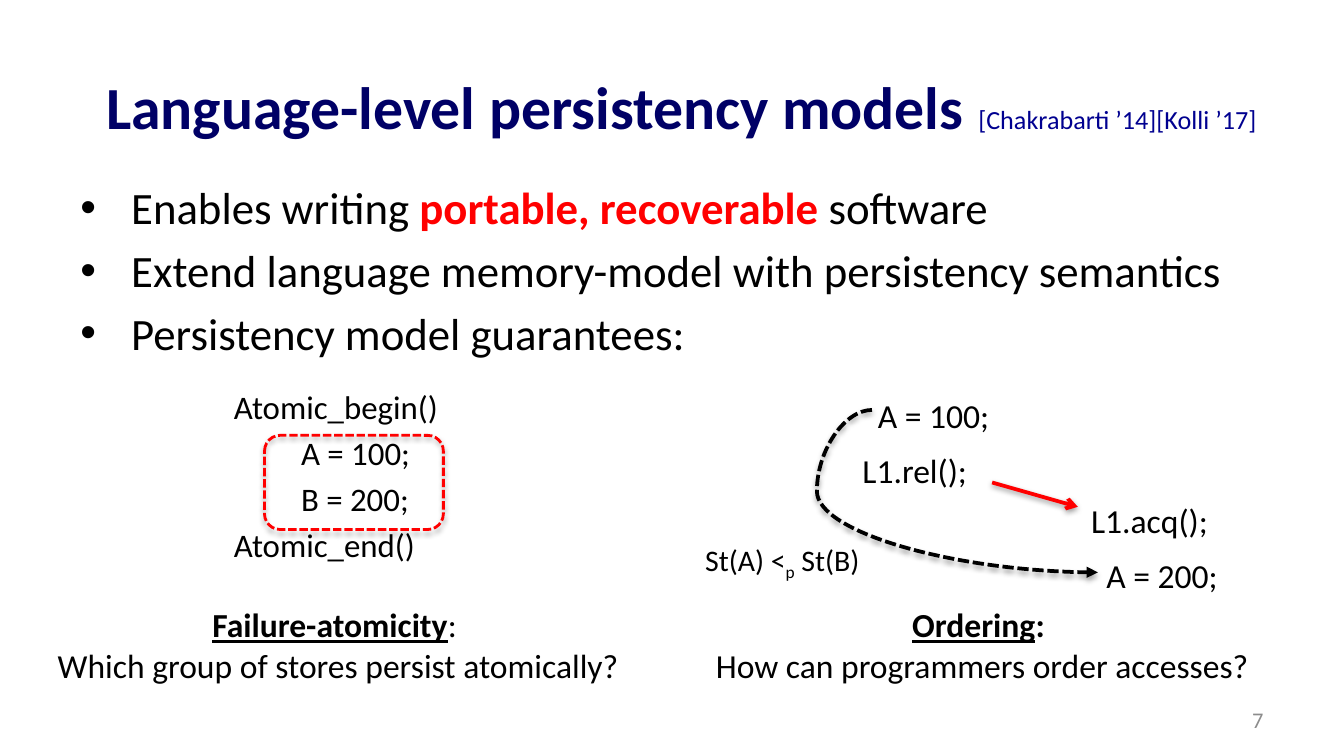
from lxml.etree import SubElement
from pptx import Presentation
from pptx.dml.color import RGBColor
from pptx.enum.dml import MSO_LINE
from pptx.enum.shapes import MSO_CONNECTOR, MSO_SHAPE
from pptx.enum.text import MSO_ANCHOR, PP_ALIGN
from pptx.oxml.ns import qn
from pptx.util import Cm, Pt

COLORS = {"title": "000066", "citation": "000090", "text": "000000",
          "accent": "FF0000", "number": "8C8C8C"}
FONT = "Calibri"


def rgb(name):
    """Return the named palette colour."""
    return RGBColor.from_string(COLORS[name])


def add_text(slide, box, paragraphs, size, align=PP_ALIGN.LEFT, color="text",
             anchor=MSO_ANCHOR.TOP, before=0.0, spacing=None):
    """Add a text box of paragraphs, each a list of (text, overrides) runs."""
    frame = slide.shapes.add_textbox(*map(Cm, box)).text_frame
    frame.word_wrap = True
    frame.vertical_anchor = anchor
    for index, runs in enumerate(paragraphs):
        paragraph = frame.add_paragraph() if index else frame.paragraphs[0]
        paragraph.alignment = align
        if index and before:
            paragraph.space_before = Pt(before)
        if spacing:
            paragraph.line_spacing = spacing
        for text, style in runs:
            run = paragraph.add_run()
            run.text = text
            run.font.name = FONT
            run.font.size = Pt(style.get("size", size))
            run.font.bold = style.get("bold", False)
            run.font.underline = style.get("underline", False)
            run.font.color.rgb = rgb(style.get("color", color))
            if "baseline" in style:
                run.font._element.set("baseline", str(style["baseline"]))
    return frame


def indent(paragraph, margin, first=0.0):
    """Set the left margin and first-line indent of a paragraph."""
    properties = paragraph._p.get_or_add_pPr()
    properties.set("marL", str(Cm(margin)))
    properties.set("indent", str(Cm(first)))
    return properties


def add_shadow(shape, alpha, distance):
    """Give a shape a soft shadow falling straight down."""
    effects = SubElement(shape._element.spPr, qn("a:effectLst"))
    shadow = SubElement(effects, qn("a:outerShdw"), blurRad=str(Pt(3.1)),
                        dist=str(Pt(distance)), dir="5400000", rotWithShape="0")
    black = SubElement(shadow, qn("a:srgbClr"), val=COLORS["text"])
    SubElement(black, qn("a:alpha"), val=str(alpha * 1000))


def add_arrow(slide, kind, start, end, color, head, dash=None):
    """Add a shadowed connector with an arrowhead at its end."""
    arrow = slide.shapes.add_connector(kind, *map(Cm, (*start, *end)))
    arrow.line.color.rgb = rgb(color)
    arrow.line.width = Pt(2)
    if dash:
        arrow.line.dash_style = dash
    SubElement(arrow.line._get_or_add_ln(), qn("a:tailEnd"), type=head)
    add_shadow(arrow, 38, 1.6)
    return arrow


def add_title(slide, box):
    """Place the heading and its citations."""
    add_text(slide, box, [[
        ("Language-level persistency models ", {"bold": True}),
        ("[Chakrabarti ’14][Kolli ’17]", {"size": 14, "color": "citation"}),
    ]], 32, PP_ALIGN.CENTER, "title", MSO_ANCHOR.MIDDLE)


def add_bullets(slide, box):
    """Place the three bulleted statements."""
    frame = add_text(slide, box, [
        [("Enables writing ", {}),
         ("portable, recoverable ", {"bold": True, "color": "accent"}),
         ("software", {})],
        [("Extend language memory-model with persistency semantics", {})],
        [("Persistency model guarantees:", {})],
    ], 24, before=4.8)
    for paragraph in frame.paragraphs:
        properties = indent(paragraph, 0.96, -0.96)
        SubElement(properties, qn("a:buFont"), typeface="Arial")
        SubElement(properties, qn("a:buChar"), char="•")


def add_caption(slide, box, term, colon_bold, question):
    """Place an underlined term above the question it answers."""
    return add_text(slide, box, [
        [(term, {"bold": True, "underline": True}), (": ", {"bold": colon_bold})],
        [(question, {})],
    ], 18, PP_ALIGN.CENTER)


def add_atomicity(slide, box):
    """Place the failure-atomicity example and caption."""
    left, top, width, height = box
    lines = ["Atomic_begin()", "A = 100;", "B = 200;", "Atomic_end()"]
    code = add_text(slide, (left + 3.64, top, 4.47, 4.27),
                    [[(line, {})] for line in lines], 17.6, before=3.5)
    for store in code.paragraphs[1:3]:
        indent(store, 1.27)
    group = slide.shapes.add_shape(
        MSO_SHAPE.ROUNDED_RECTANGLE,
        *map(Cm, (left + 4.47, top + 1.04, 3.38, 1.78)))
    group.fill.background()
    group.line.color.rgb = rgb("accent")
    group.line.width = Pt(1.5)
    group.line.dash_style = MSO_LINE.SQUARE_DOT
    add_shadow(group, 35, 1.8)
    add_caption(slide, (left, top + height - 1.8, width, 1.8),
                "Failure-atomicity", False,
                "Which group of stores persist atomically?")


def add_ordering(slide, box):
    """Place the two-thread ordering example and caption."""
    left, top, width, height = box
    caption = add_caption(slide, (left, top + height - 1.8, width, 1.8),
                          "Ordering", True, "How can programmers order accesses?")
    for paragraph in caption.paragraphs:
        indent(paragraph, 1.75, -0.89)
    threads = [((3.78, 0, 3.45, 2.44), ["A = 100;", "L1.rel();"], 0),
               ((8.1, 1.98, 3.18, 2.59), ["L1.acq();", "A = 200;"], 1)]
    for (x, y, w, h), lines, store in threads:
        code = add_text(slide, (left + x, top + y, w, h),
                        [[(line, {})] for line in lines], 18,
                        before=3.6, spacing=1.2)
        indent(code.paragraphs[store], 0.29)
    add_arrow(slide, MSO_CONNECTOR.STRAIGHT, (left + 6.48, top + 1.93),
              (left + 8.1, top + 2.39), "accent", "arrow")
    add_text(slide, (left + 0.51, top + 2.77, 4.01, 1.19), [[
        ("St(A) <", {}), ("p", {"baseline": -25000}), (" St(B)", {}),
    ]], 16, PP_ALIGN.CENTER, spacing=1.2)
    persist = add_arrow(slide, MSO_CONNECTOR.CURVE, (left + 4.21, top + 0.56),
                        (left + 8.48, top + 3.63), "text", "triangle",
                        MSO_LINE.SQUARE_DOT)
    adjustments = persist._element.spPr.find(qn("a:prstGeom")).find(qn("a:avLst"))
    SubElement(adjustments, qn("a:gd"), name="adj1", fmla="val -24400")


def add_number(slide, box):
    """Place the slide number."""
    add_text(slide, box, [[("7", {})]], 12, PP_ALIGN.RIGHT, "number",
             MSO_ANCHOR.MIDDLE)


def main():
    """Build and save the slide."""
    deck = Presentation()
    deck.slide_width, deck.slide_height = Cm(25.4), Cm(14.29)
    slide = deck.slides.add_slide(deck.slide_layouts[6])
    add_title(slide, (1.27, 0.51, 23.22, 2.97))
    add_bullets(slide, (1.27, 3.28, 24.13, 3.63))
    add_number(slide, (18.21, 13.23, 5.92, 0.76))
    add_atomicity(slide, (0.53, 7.19, 11.73, 5.91))
    add_ordering(slide, (12.27, 7.19, 11.73, 5.91))
    deck.save("out.pptx")


if __name__ == "__main__":
    main()
